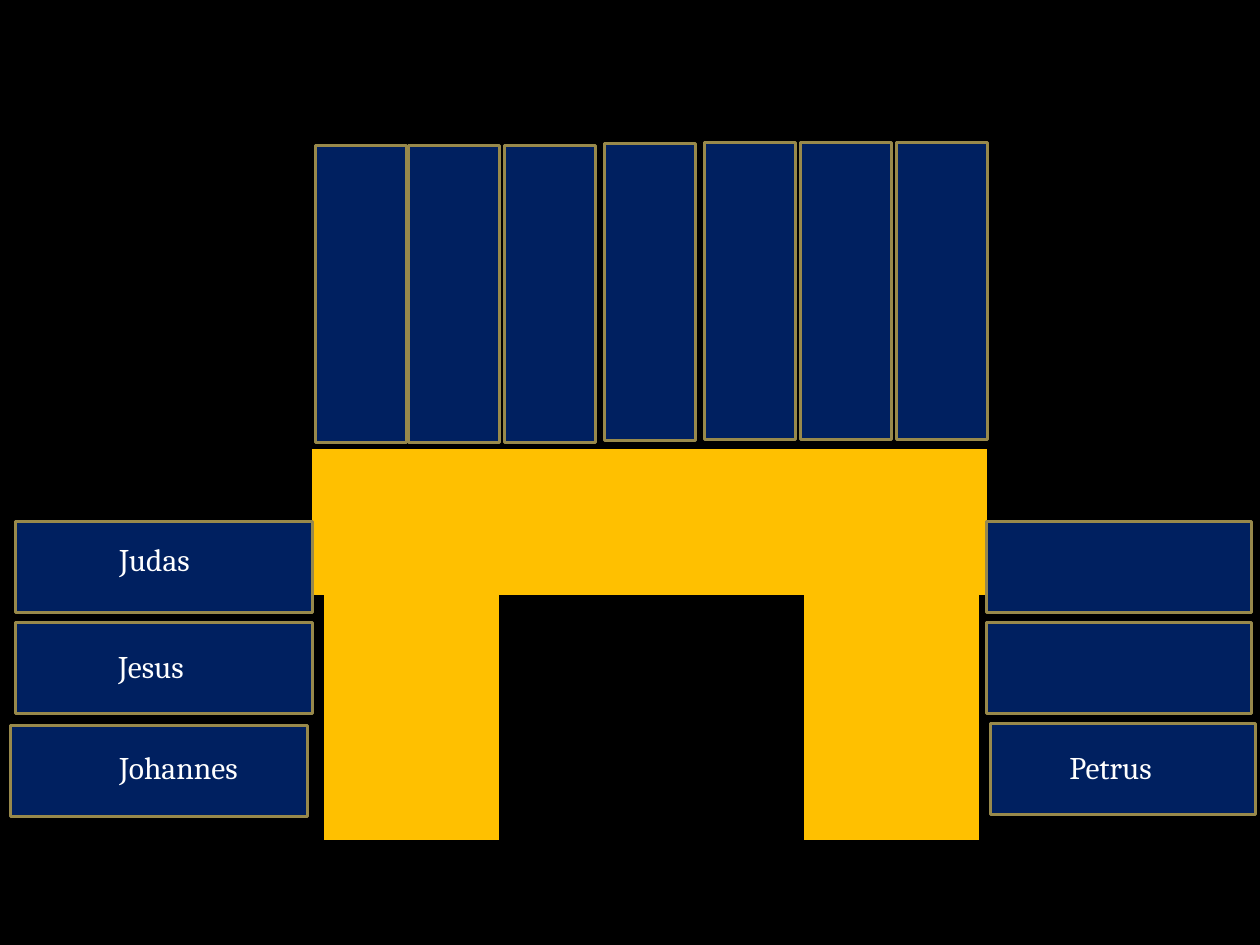
from dataclasses import dataclass

from pptx import Presentation
from pptx import util as u
from pptx.dml.color import RGBColor
from pptx.enum import shapes, text
from pptx.oxml import parse_xml
from pptx.oxml.ns import nsdecls
from pptx.slide import Slide

EMU_PER_PX = 914400 / 126


@dataclass(frozen=True)
class Theme:
    background: RGBColor = RGBColor(0x00, 0x00, 0x00)
    table: RGBColor = RGBColor(0xFF, 0xC0, 0x00)
    seat: RGBColor = RGBColor(0x00, 0x20, 0x60)
    seat_edge: RGBColor = RGBColor(0x98, 0x89, 0x4B)
    name: RGBColor = RGBColor(0xFF, 0xFF, 0xFF)
    font: str = "Cambria"
    name_size: int = 18
    seat_edge_width: int = 2


@dataclass(frozen=True)
class TablePart:
    x1: int
    y1: int
    x2: int
    y2: int
    thickness: float


@dataclass(frozen=True)
class Seat:
    center_x: int
    center_y: int
    length: int = 297
    rotation: int = 0


@dataclass(frozen=True)
class GuestName:
    guest: str
    left: int
    top: int
    width: int


THEME = Theme()
SEAT_WIDTH = 91
NAME_HEIGHT = 50

TABLE_PARTS = [
    TablePart(312, 522, 987, 522, 83.75),
    TablePart(892, 582, 892, 840, 100),
    TablePart(412, 582, 412, 840, 100),
]
LEFT_SEATS = [Seat(x, y, rotation=270) for x, y in ((159, 771), (164, 668), (164, 567))]
RIGHT_SEATS = [Seat(x, y, 265, 270) for x, y in ((1123, 769), (1119, 668), (1119, 567))]
TOP_SEATS = [
    Seat(x, y)
    for x, y in (
        (361, 294), (454, 294), (550, 294), (650, 292),
        (750, 291), (846, 291), (942, 291),
    )
]
GUEST_NAMES = [
    GuestName("Johannes", 107, 742, 154),
    GuestName("Jesus", 106, 641, 97),
    GuestName("Petrus", 1057, 742, 116),
    GuestName("Judas", 107, 534, 105),
]


def px(value: float) -> u.Emu:
    return u.Emu(round(value * EMU_PER_PX))


def draw_table_part(slide: Slide, part: TablePart) -> None:
    bar = slide.shapes.add_connector(
        shapes.MSO_CONNECTOR.STRAIGHT,
        px(part.x1), px(part.y1), px(part.x2), px(part.y2),
    )
    bar.line.color.rgb = THEME.table
    bar.line.width = u.Pt(part.thickness)
    bar._element.spPr.append(parse_xml(f"<a:effectLst {nsdecls('a')}/>"))


def draw_seat(slide: Slide, seat: Seat) -> None:
    chair = slide.shapes.add_shape(
        shapes.MSO_SHAPE.RECTANGLE,
        px(seat.center_x - SEAT_WIDTH / 2), px(seat.center_y - seat.length / 2),
        px(SEAT_WIDTH), px(seat.length),
    )
    chair.rotation = seat.rotation
    chair.shadow.inherit = False
    chair.fill.solid()
    chair.fill.fore_color.rgb = THEME.seat
    chair.line.color.rgb = THEME.seat_edge
    chair.line.width = u.Pt(THEME.seat_edge_width)


def draw_name(slide: Slide, name: GuestName) -> None:
    label = slide.shapes.add_textbox(
        px(name.left), px(name.top), px(name.width), px(NAME_HEIGHT)
    )
    frame = label.text_frame
    frame.text = name.guest
    frame.word_wrap = False
    frame.auto_size = text.MSO_AUTO_SIZE.SHAPE_TO_FIT_TEXT
    font = frame.paragraphs[0].runs[0].font
    font.name = THEME.font
    font.size = u.Pt(THEME.name_size)
    font.color.rgb = THEME.name


def main() -> None:
    deck = Presentation()
    deck.slide_width, deck.slide_height = px(1260), px(945)
    slide = deck.slides.add_slide(deck.slide_layouts[6])
    slide.background.fill.solid()
    slide.background.fill.fore_color.rgb = THEME.background

    for part in TABLE_PARTS:
        draw_table_part(slide, part)
    for seat in LEFT_SEATS + RIGHT_SEATS + TOP_SEATS:
        draw_seat(slide, seat)
    for name in GUEST_NAMES:
        draw_name(slide, name)

    deck.save("out.pptx")


if __name__ == "__main__":
    main()
